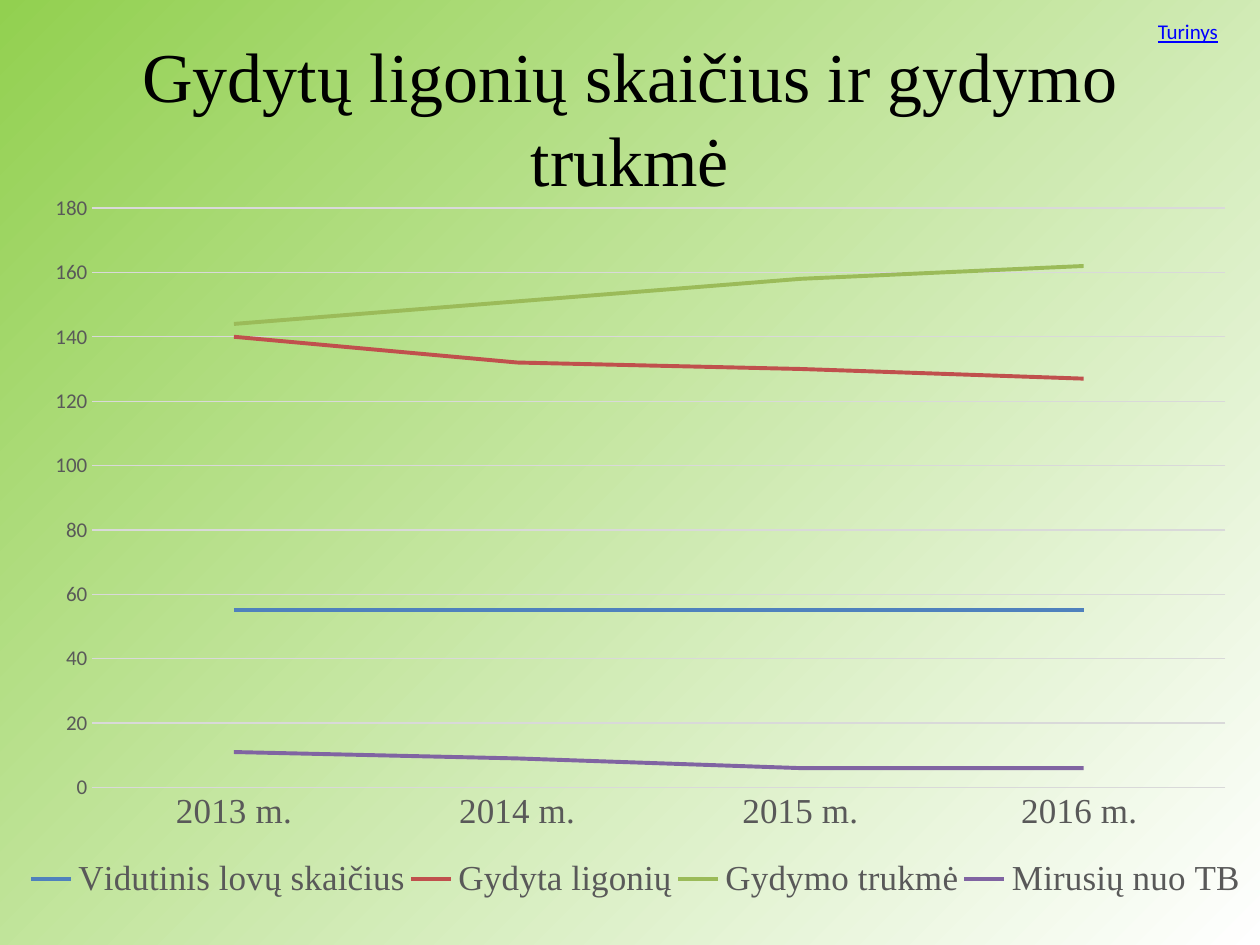
from pptx import Presentation
from pptx.chart.data import CategoryChartData
from pptx.dml.color import RGBColor
from pptx.enum.chart import XL_CHART_TYPE, XL_LEGEND_POSITION, XL_TICK_MARK
from pptx.enum.text import MSO_ANCHOR, MSO_AUTO_SIZE, PP_ALIGN
from pptx.oxml import parse_xml
from pptx.oxml.ns import nsdecls, qn
from pptx.util import Inches, Pt

LINE = XL_CHART_TYPE.LINE
BOTTOM = XL_LEGEND_POSITION.BOTTOM
NO_TICK = XL_TICK_MARK.NONE
MIDDLE = MSO_ANCHOR.MIDDLE
FIXED, GROW = MSO_AUTO_SIZE.NONE, MSO_AUTO_SIZE.SHAPE_TO_FIT_TEXT
CENTER = PP_ALIGN.CENTER

BLACK = RGBColor(0x00, 0x00, 0x00)
WHITE = RGBColor(0xFF, 0xFF, 0xFF)
LIME = RGBColor(0x92, 0xD0, 0x50)
GRAY = RGBColor(0x59, 0x59, 0x59)
PALE = RGBColor(0xD9, 0xD9, 0xD9)
LINK = RGBColor(0x00, 0x00, 0xFF)
BLUE = RGBColor(0x4F, 0x81, 0xBD)
RED = RGBColor(0xC0, 0x50, 0x4D)
GREEN = RGBColor(0x9B, 0xBB, 0x59)
PURPLE = RGBColor(0x80, 0x64, 0xA2)

SERIF, SANS = "Times New Roman", "Calibri"
YEARS = ["2013 m.", "2014 m.", "2015 m.", "2016 m. "]
SERIES = [
    ("Vidutinis lovų skaičius", (55, 55, 55, 55), BLUE),
    ("Gydyta ligonių", (140, 132, 130, 127), RED),
    ("Gydymo trukmė", (144, 151, 158, 162), GREEN),
    ("Mirusių nuo TB", (11, 9, 6, 6), PURPLE),
]
PLOT = {"x": 0.055, "y": 0.018, "w": 0.928, "h": 0.814}
KEY = {"x": 0, "y": 0.92, "w": 1, "h": 0.08}


def set_font(font, name, size, color):
    """Set the face, size and colour of a font."""
    font.name, font.size = name, Pt(size)
    font.color.rgb = color


def set_line(line, color, width):
    """Set the colour and width of a line."""
    line.color.rgb = color
    line.width = Pt(width)


def set_back(slide):
    """Fill the slide with a diagonal gradient."""
    fill = slide.background.fill
    fill.gradient()
    fill.gradient_angle = 315
    for stop, color in zip(fill.gradient_stops, (LIME, WHITE)):
        stop.color.rgb = color


def set_title(slide, text):
    """Place and format the title."""
    title = slide.shapes.title
    title.left, title.top = Inches(0.5), Inches(0.3)
    title.width, title.height = Inches(9), Inches(1.25)
    frame = title.text_frame
    frame.text = text
    frame.auto_size = FIXED
    frame.vertical_anchor = MIDDLE
    para = frame.paragraphs[0]
    para.alignment = CENTER
    set_font(para.font, SERIF, 40, BLACK)


def add_label(slide, text):
    """Add the underlined contents label in the corner."""
    box = slide.shapes.add_textbox(Inches(9.09), Inches(0.1), Inches(0.91), Inches(0.3))
    frame = box.text_frame
    frame.word_wrap = True
    frame.auto_size = GROW
    frame.vertical_anchor = MIDDLE
    frame.text = text
    font = frame.paragraphs[0].font
    set_font(font, SANS, 12, LINK)
    font.underline = True


def set_place(part, index, place, target=""):
    """Fix the place of a chart part as shares of the chart."""
    for old in part.findall(qn("c:layout")):
        part.remove(old)
    modes = "".join(f'<c:{k}Mode val="edge"/>' for k in "xy")
    sizes = "".join(f'<c:{k} val="{v}"/>' for k, v in place.items())
    part.insert(index, parse_xml(
        f'<c:layout {nsdecls("c")}><c:manualLayout>{target}'
        f"{modes}{sizes}</c:manualLayout></c:layout>"))


def set_axes(chart):
    """Format both axes and the gridlines."""
    years, count = chart.category_axis, chart.value_axis
    for axis, face, size in ((years, SERIF, 20), (count, SANS, 12)):
        axis.major_tick_mark = axis.minor_tick_mark = NO_TICK
        set_font(axis.tick_labels.font, face, size, GRAY)
    set_line(years.format.line, PALE, 0.75)
    count.format.line.fill.background()
    count.minimum_scale, count.maximum_scale, count.major_unit = 0, 180, 20
    set_line(count.major_gridlines.format.line, PALE, 0.75)


def set_legend(chart):
    """Show the legend in one row below the years."""
    chart.has_legend = True
    legend = chart.legend
    legend.position = BOTTOM
    legend.include_in_layout = False
    set_font(legend.font, SERIF, 20, GRAY)
    set_place(legend._element, 1, KEY)


def add_lines(slide):
    """Add the line chart of patients and treatment length."""
    data = CategoryChartData()
    data.categories = YEARS
    for name, values, _ in SERIES:
        data.add_series(name, values)
    chart = slide.shapes.add_chart(
        LINE, Inches(0.2), Inches(1.55), Inches(9.69), Inches(5.65), data).chart
    set_font(chart.font, SANS, 10, BLACK)
    chart.has_title = False
    plot = chart.plots[0]
    plot.vary_by_categories = False
    for item, (_, _, color) in zip(plot.series, SERIES):
        item.smooth = False
        set_line(item.format.line, color, 2.25)
    set_axes(chart)
    set_legend(chart)
    set_place(plot._element.getparent(), 0, PLOT, '<c:layoutTarget val="inner"/>')


def main():
    """Build the slide and save it."""
    deck = Presentation()
    deck.slide_width, deck.slide_height = Inches(10), Inches(7.5)
    slide = deck.slides.add_slide(deck.slide_layouts[5])
    set_back(slide)
    set_title(slide, "Gydytų ligonių skaičius ir gydymo trukmė")
    add_lines(slide)
    add_label(slide, "Turinys")
    deck.save("out.pptx")


if __name__ == "__main__":
    main()
